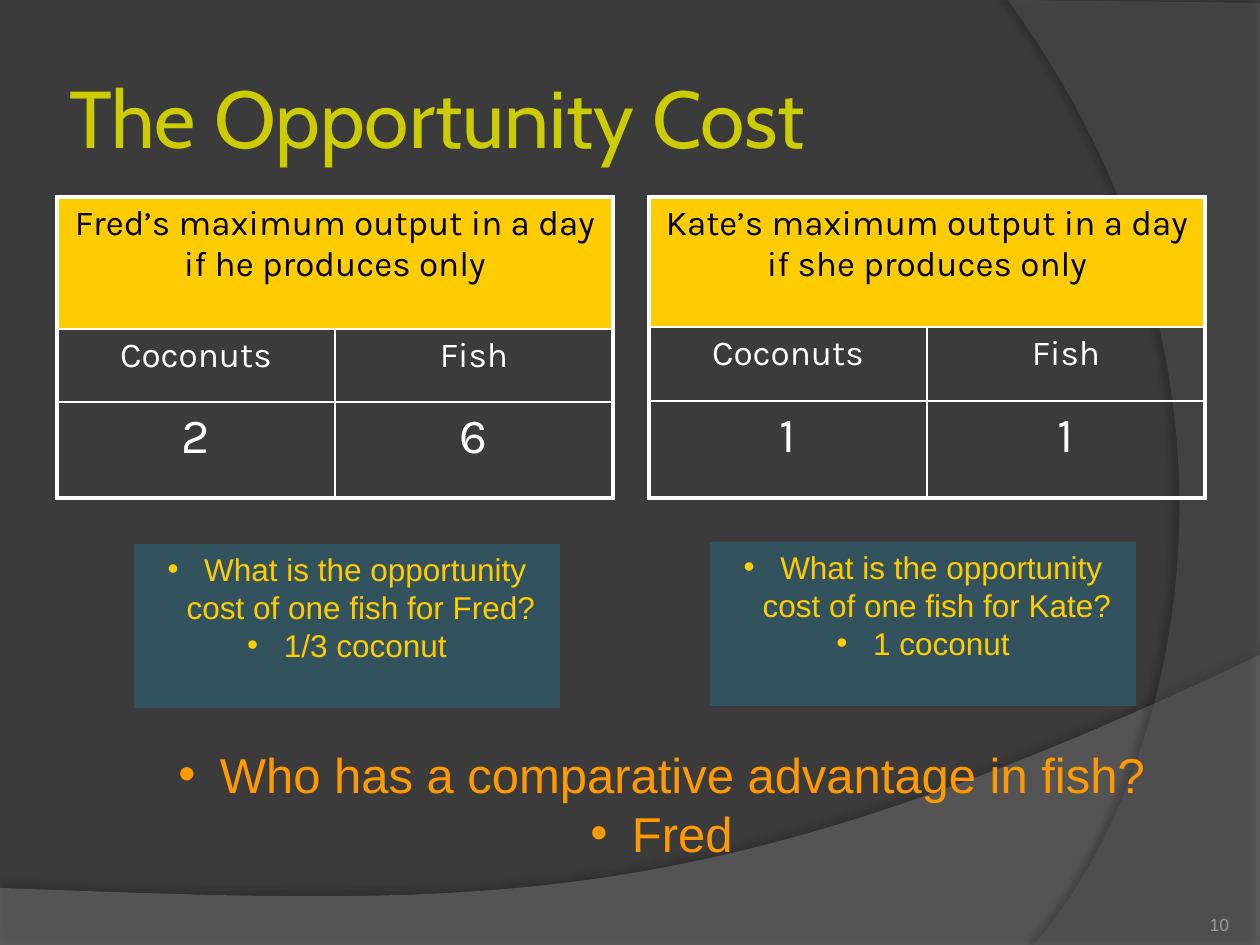
from dataclasses import dataclass

from lxml import etree
from pptx import Presentation, util as u
from pptx.dml.color import RGBColor
from pptx.enum import shapes, text
from pptx.oxml import ns

SCALE = 914400 / 126
DARK = RGBColor(0x3B, 0x3B, 0x3B)
GREY = RGBColor(0x7F, 0x7F, 0x7F)
SMOKE = RGBColor(0x5E, 0x5E, 0x5E)
LIME = RGBColor(0xCC, 0xCC, 0x00)
GOLD = RGBColor(0xFF, 0xCC, 0x00)
AMBER = RGBColor(0xFF, 0x99, 0x00)
TEAL = RGBColor(0x32, 0x52, 0x5D)
PALE = RGBColor(0x9D, 0x9B, 0x9A)
WHITE = RGBColor(0xFF, 0xFF, 0xFF)
BLACK = RGBColor(0x00, 0x00, 0x00)
LEFT, MID, RIGHT = text.PP_ALIGN.LEFT, text.PP_ALIGN.CENTER, text.PP_ALIGN.RIGHT
TOP, CENTRE, LOW = (text.MSO_ANCHOR.TOP, text.MSO_ANCHOR.MIDDLE,
                    text.MSO_ANCHOR.BOTTOM)
HANG = 28


@dataclass
class Wave:
    line: list
    curve: list
    fill: RGBColor
    alpha: int
    shade: int
    dist: float
    angle: int


@dataclass
class Grid:
    left: int
    rows: list
    head: str
    fish: str
    nuts: str


@dataclass
class Card:
    left: int
    top: int
    lines: list


WAVES = [
    Wave([(0, 888), (0, 946), (1260, 946), (1260, 655)],
         [(704, 919), (493, 906), (0, 888)], GREY, 45, 35, 3.5, 270),
    Wave([(1008, 0), (1260, 3), (1260, 945), (1034, 945)],
         [(1178, 780), (1283, 378), (1008, 0)], SMOKE, 40, 45, 4, 180),
]
GRIDS = [
    Grid(57, [132, 73, 96],
         "Fred’s maximum output in a day if he produces only", "6", "2"),
    Grid(649, [130, 74, 97],
         "Kate’s maximum output in a day if she produces only", "1", "1"),
]
CARDS = [
    Card(134, 544, [" What is the opportunity cost of one fish for Fred?",
                    " 1/3 coconut"]),
    Card(710, 542, [" What is the opportunity cost of one fish for Kate?",
                    " 1 coconut"]),
]


def px(num: float) -> u.Emu:
    return u.Emu(round(num * SCALE))


def box(*nums: int) -> list:
    return [px(num) for num in nums]


def node(root, tag: str, **attrs):
    return etree.SubElement(root, ns.qn(tag),
                            {key: str(val) for key, val in attrs.items()})


def write(frame, lines: list, *, size: int, color: RGBColor, font="Arial",
          align=MID, anchor=TOP, wrap=True, inset=None, bullet=False, gap=0) -> None:
    frame.word_wrap = wrap
    frame.vertical_anchor = anchor
    if inset is not None:
        frame.margin_left = frame.margin_right = px(inset)
        frame.margin_top = frame.margin_bottom = px(inset)
    for num, line in enumerate(lines):
        para = frame.add_paragraph() if num else frame.paragraphs[0]
        para.alignment = align
        para.space_before = u.Pt(gap)
        run = para.add_run()
        run.text = line
        run.font.size = u.Pt(size)
        run.font.name = font
        run.font.color.rgb = color
        if bullet:
            props = para._p.get_or_add_pPr()
            props.set("marL", str(px(HANG)))
            props.set("indent", str(-px(HANG)))
            node(props, "a:buFont", typeface="Arial")
            node(props, "a:buChar", char="•")


def trace(start: tuple, curve: list, steps: int = 48) -> list:
    pts = [start, *curve]
    out = []
    for num in range(1, steps + 1):
        t = num / steps
        mix = [(1 - t) ** 3, 3 * t * (1 - t) ** 2, 3 * t * t * (1 - t), t ** 3]
        out.append(tuple(sum(w * p[axis] for w, p in zip(mix, pts))
                         for axis in (0, 1)))
    return out


def draw_wave(slide, wave: Wave) -> None:
    pen = slide.shapes.build_freeform(*box(*wave.line[0]), scale=1.0)
    pts = wave.line[1:] + trace(wave.line[-1], wave.curve)
    pen.add_line_segments([tuple(box(*pt)) for pt in pts], close=True)
    shape = pen.convert_to_shape()
    shape.fill.solid()
    shape.fill.fore_color.rgb = wave.fill
    shape.line.fill.background()
    props = shape._element.spPr
    tint = props.find(ns.qn("a:solidFill"))[0]
    node(tint, "a:alpha", val=wave.alpha * 1000)
    shape.shadow.inherit = False
    glow = node(props.find(ns.qn("a:effectLst")), "a:outerShdw",
                blurRad=u.Pt(4), dist=u.Pt(wave.dist),
                dir=wave.angle * 60000, algn="ctr", rotWithShape=0)
    node(node(glow, "a:srgbClr", val=BLACK), "a:alpha", val=wave.shade * 1000)


def edge(cell, **widths: float) -> None:
    props = cell._tc.get_or_add_tcPr()
    for side, width in widths.items():
        line = node(props, f"a:ln{side}", w=u.Pt(width))
        node(node(line, "a:solidFill"), "a:srgbClr", val=WHITE)


def draw_grid(slide, grid: Grid) -> None:
    frame = slide.shapes.add_table(
        3, 2, *box(grid.left, 197, 556, sum(grid.rows)))
    table = frame.table
    table.first_row = table.horz_banding = False
    for col in table.columns:
        col.width = px(278)
    for row, high in zip(table.rows, grid.rows):
        row.height = px(high)
    table.cell(0, 0).merge(table.cell(0, 1))
    words = [[grid.head, ""], ["Coconuts", "Fish"], [grid.nuts, grid.fish]]
    for r, line in enumerate(words):
        for c, word in enumerate(line):
            cell = table.cell(r, c)
            edge(cell, L=1 if c else 2.25, R=2.25 if c or r == 0 else 1,
                 T=1 if r else 2.25, B=2.25 if r == 2 else 1)
            if r == 0:
                cell.fill.solid()
                cell.fill.fore_color.rgb = GOLD
            else:
                cell.fill.background()
            if word:
                size = 28 if r == 2 else 20
                write(cell.text_frame, [word], size=size, font="Karla",
                      color=WHITE if r else BLACK, gap=size // 5)


def draw_card(slide, card: Card) -> None:
    shape = slide.shapes.add_shape(shapes.MSO_SHAPE.RECTANGLE,
                                   *box(card.left, card.top, 426, 164))
    shape.shadow.inherit = False
    shape.fill.solid()
    shape.fill.fore_color.rgb = TEAL
    shape.line.fill.background()
    write(shape.text_frame, card.lines, size=18, color=GOLD, bullet=True)


def label(slide, area: tuple, lines: list, **style) -> None:
    write(slide.shapes.add_textbox(*box(*area)).text_frame, lines, **style)


def main() -> None:
    deck = Presentation()
    deck.slide_width, deck.slide_height = box(1260, 945)
    slide = deck.slides.add_slide(deck.slide_layouts[6])
    slide.background.fill.solid()
    slide.background.fill.fore_color.rgb = DARK
    for wave in WAVES:
        draw_wave(slide, wave)
    label(slide, (63, 38, 1029, 157), ["The Opportunity Cost"], size=46,
          color=LIME, font="Cabin", align=LEFT, anchor=CENTRE, inset=6)
    for grid in GRIDS:
        draw_grid(slide, grid)
    for card in CARDS:
        draw_card(slide, card)
    label(slide, (165, 738, 993, 131),
          [" Who has a comparative advantage in fish?", " Fred"],
          size=28, color=AMBER, wrap=False, bullet=True)
    label(slide, (1124, 885, 105, 50), ["10"], size=10, color=PALE,
          align=RIGHT, anchor=LOW, inset=0)
    deck.save("out.pptx")


if __name__ == "__main__":
    main()
